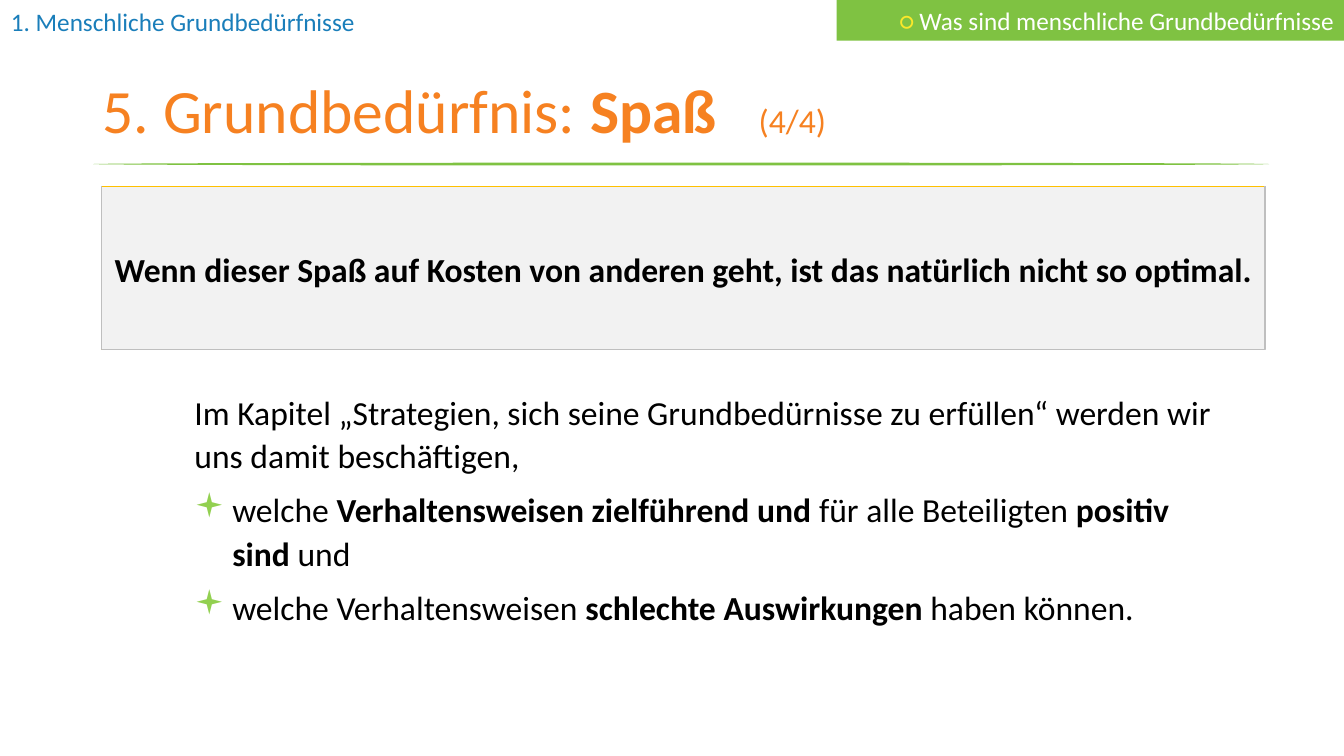
from lxml.etree import SubElement
from pptx import Presentation
from pptx.dml.color import RGBColor
from pptx.enum.shapes import MSO_SHAPE
from pptx.enum.text import MSO_ANCHOR, PP_ALIGN
from pptx.oxml.ns import qn
from pptx.util import Pt

WHITE = RGBColor(0xFF, 0xFF, 0xFF)
BLACK = RGBColor(0, 0, 0)
BLUE = RGBColor(0x1A, 0x7E, 0xBA)
GREEN = RGBColor(0x7F, 0xC2, 0x42)
ORANGE = RGBColor(0xF6, 0x81, 0x21)
YELLOW = RGBColor(0xFB, 0xE8, 0x2A)
GOLD = RGBColor(0xFF, 0xC0, 0)
PALE = RGBColor(0xF2, 0xF2, 0xF2)
GREY = RGBColor(0xBF, 0xBF, 0xBF)
LIME = "92D050"

CHAPTER = [("1. Menschliche Grundbedürfnisse", 18, BLUE, False)]
TOPIC = [("○ ", 18, YELLOW, False),
         ("Was sind menschliche Grundbedürfnisse", 18, WHITE, False)]
TITLE = [("5. Grundbedürfnis: ", 44, ORANGE, False),
         ("Spaß", 44, ORANGE, True),
         ("\t(4/4)", 24, ORANGE, False)]
CLAIM = [("Wenn dieser Spaß auf Kosten von anderen geht, "
          "ist das natürlich nicht so optimal.", 24, BLACK, True)]
INTRO = [("Im Kapitel „Strategien, sich seine Grundbedürnisse zu erfüllen“ "
          "werden wir uns damit beschäftigen,", 24, BLACK, False)]
POINTS = [
    [("welche ", 24, BLACK, False),
     ("Verhaltensweisen zielführend und ", 24, BLACK, True),
     ("für alle Beteiligten ", 24, BLACK, False),
     ("positiv sind", 24, BLACK, True),
     (" und", 24, BLACK, False)],
    [("welche Verhaltensweisen ", 24, BLACK, False),
     ("schlechte Auswirkungen ", 24, BLACK, True),
     ("haben können.", 24, BLACK, False)],
]
BOX = (72.7, 133.2, 830.9, 116.6)
TAB = 468.7
INDENT = 27


def add_part(area, fill, kind=MSO_SHAPE.RECTANGLE, edge=None):
    part = slide.shapes.add_shape(kind, *map(Pt, area))
    part.shadow.inherit = False
    part.fill.solid()
    part.fill.fore_color.rgb = fill
    if edge is None:
        part.line.fill.background()
    else:
        part.line.color.rgb = edge
        part.line.width = Pt(0.75)
    return part


def add_text(area):
    return slide.shapes.add_textbox(*map(Pt, area))


def frame(part, anchor=MSO_ANCHOR.TOP):
    body = part.text_frame
    body.word_wrap = True
    body.vertical_anchor = anchor
    return body


def write(para, runs, align=PP_ALIGN.LEFT, lines=None, after=None):
    para.alignment = align
    if lines:
        para.line_spacing = lines
    if after:
        para.space_after = Pt(after)
    for text, size, color, bold in runs:
        run = para.add_run()
        run.text = text
        run.font.name = "Calibri"
        run.font.size = Pt(size)
        run.font.color.rgb = color
        run.font.bold = bold


def add_bullet(para):
    props = para._p.get_or_add_pPr()
    props.set("marL", str(Pt(INDENT)))
    props.set("indent", str(-Pt(INDENT)))
    tint = SubElement(props, qn("a:buClr"))
    SubElement(tint, qn("a:srgbClr"), val=LIME)
    SubElement(props, qn("a:buFont"), typeface="Wingdings")
    SubElement(props, qn("a:buChar"), char="▪")


def add_tab(para):
    tabs = SubElement(para._p.get_or_add_pPr(), qn("a:tabLst"))
    SubElement(tabs, qn("a:tab"), pos=str(Pt(TAB)), algn="l")


deck = Presentation()
deck.slide_width, deck.slide_height = Pt(960), Pt(540)
slide = deck.slides.add_slide(deck.slide_layouts[6])

chapter = frame(add_part((0.7, 0.7, 310.3, 29), WHITE))
write(chapter.paragraphs[0], CHAPTER)

add_part((66.5, 116.2, 840, 2), GREEN, MSO_SHAPE.OVAL)

title = frame(add_text((66.2, 28.8, 828, 104.4)), MSO_ANCHOR.MIDDLE)
add_tab(title.paragraphs[0])
write(title.paragraphs[0], TITLE, lines=0.9)

claim = frame(add_part(BOX, PALE, edge=GOLD), MSO_ANCHOR.MIDDLE)
claim.margin_left = claim.margin_right = Pt(5)
write(claim.paragraphs[0], CLAIM, PP_ALIGN.CENTER, 1.07)

left, top, width, height = BOX
right, low = left + width, top + height
pen = slide.shapes.build_freeform(Pt(left), Pt(top))
pen.add_line_segments([(Pt(x), Pt(y)) for x, y in
                       ((left, low), (right, low), (right, top))], close=False)
rim = pen.convert_to_shape()
rim.shadow.inherit = False
rim.fill.background()
rim.line.color.rgb = GREY
rim.line.width = Pt(0.75)

body = frame(add_text((131.8, 274.3, 747.4, 179.3)))
write(body.paragraphs[0], INTRO, lines=1.07, after=8)
for point in POINTS:
    para = body.add_paragraph()
    add_bullet(para)
    write(para, point, lines=1.07, after=8)

topic = frame(add_part((597.6, 0, 362.4, 29), GREEN))
write(topic.paragraphs[0], TOPIC, PP_ALIGN.RIGHT)

deck.save("out.pptx")
